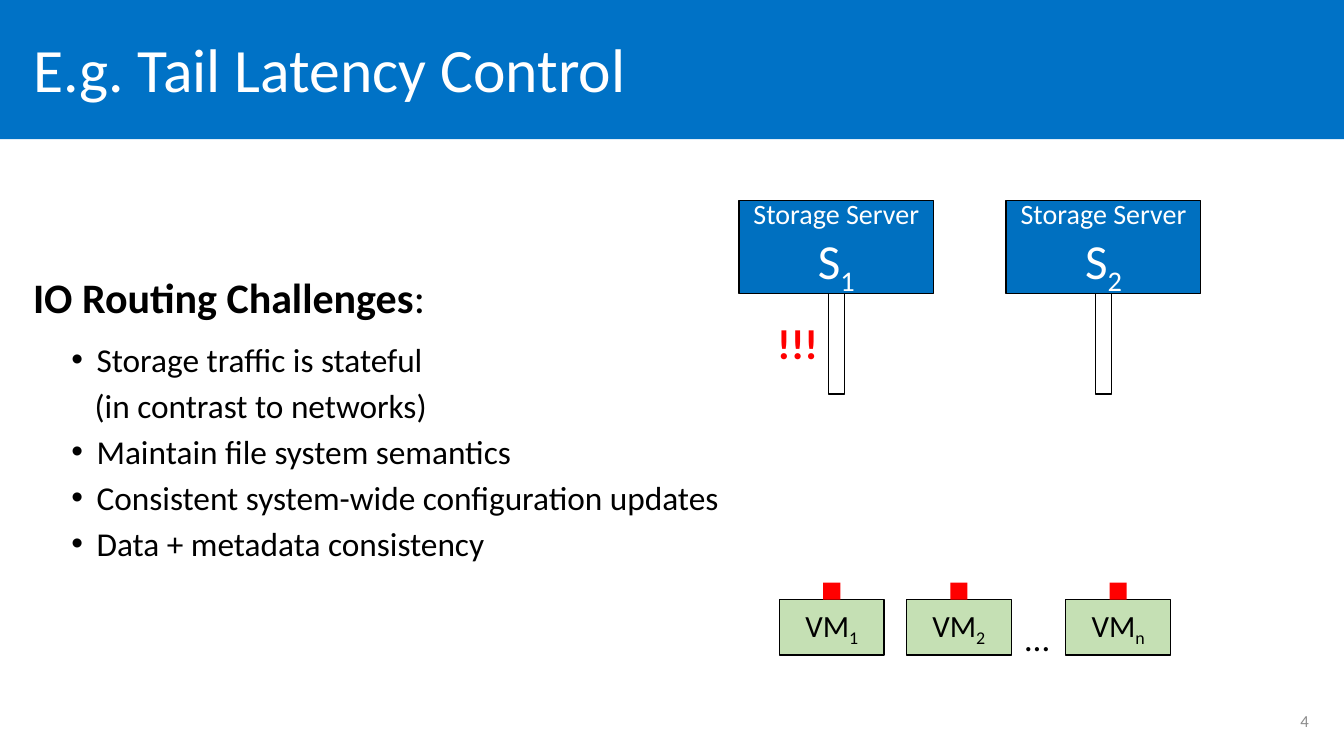
from lxml import etree
from pptx import Presentation
from pptx import util as u
from pptx.dml.color import RGBColor
from pptx.enum import shapes, text
from pptx.oxml.ns import qn

COLORS = {
    "banner": "0072C6", "server": "0070C0", "vm": "C5E0B4", "alert": "FF0000",
    "black": "000000", "white": "FFFFFF", "number": "8C8C8C",
}
TITLE = "E.g. Tail Latency Control"
HEADING = [("IO Routing Challenges", {"bold": True}), (":", {})]
CHALLENGES = [
    ("Storage traffic is stateful", True),
    ("(in contrast to networks)", False),
    ("Maintain file system semantics", True),
    ("Consistent system-wide configuration updates", True),
    ("Data + metadata consistency", True),
]
SERVERS = [("1", 7.33), ("2", 9.98)]
VMS = [("1", 7.73), ("2", 8.99), ("n", 10.57)]

SERVER_TOP, SERVER_W, SERVER_H = 1.99, 1.93, 0.92
VM_TOP, VM_W, VM_H = 5.95, 1.04, 0.55
PIPE_W, PIPE_H = 0.16, 1
REQUEST = 0.17
LEFT, CENTER, RIGHT = text.PP_ALIGN.LEFT, text.PP_ALIGN.CENTER, text.PP_ALIGN.RIGHT
MIDDLE, TOP = text.MSO_ANCHOR.MIDDLE, text.MSO_ANCHOR.TOP


def rgb(name):
    return RGBColor.from_string(COLORS[name])


def write(frame, lines, size=18, color="black", align=LEFT, anchor=TOP, wrap=True,
          spacing=None, before=None):
    frame.word_wrap = wrap
    frame.vertical_anchor = anchor
    for index, line in enumerate(lines):
        paragraph = frame.paragraphs[0] if index == 0 else frame.add_paragraph()
        paragraph.alignment = align
        if spacing:
            paragraph.line_spacing = spacing
        if before is not None:
            paragraph.space_before = u.Pt(before)
        for words, style in line:
            run = paragraph.add_run()
            run.text = words
            run.font.name = "Calibri"
            run.font.size = u.Pt(style.get("size", size))
            run.font.bold = style.get("bold", False)
            run.font.color.rgb = rgb(color)
            if style.get("sub"):
                run.font._element.set("baseline", "-25000")


def box(slide, left, top, width, height, fill=None, line=None):
    rect = slide.shapes.add_shape(shapes.MSO_SHAPE.RECTANGLE,
                                  *map(u.Inches, (left, top, width, height)))
    rect.shadow.inherit = False
    if fill:
        rect.fill.solid()
        rect.fill.fore_color.rgb = rgb(fill)
    else:
        rect.fill.background()
    if line:
        rect.line.color.rgb = rgb(line)
        rect.line.width = u.Pt(1)
    else:
        rect.line.fill.background()
    return rect


def label(slide, left, top, width, height, lines, **style):
    area = slide.shapes.add_textbox(*map(u.Inches, (left, top, width, height)))
    write(area.text_frame, lines, **style)
    return area.text_frame


def indent(paragraph, bulleted):
    props = paragraph._p.get_or_add_pPr()
    props.set("marL", str(u.Inches(0.25 if bulleted else 0.23)))
    props.set("indent", str(u.Inches(-0.25 if bulleted else 0)))
    if bulleted:
        etree.SubElement(props, qn("a:buFont")).set("typeface", "Arial")
        etree.SubElement(props, qn("a:buChar")).set("char", "•")


def main():
    deck = Presentation()
    deck.slide_width, deck.slide_height = u.Inches(13.33), u.Inches(7.5)
    slide = deck.slides.add_slide(deck.slide_layouts[5])

    title = slide.shapes.title
    title.left, title.top, title.width, title.height = map(u.Inches, (0.23, 0.13, 12.85, 1.18))
    write(title.text_frame, [[(TITLE, {})]], size=44, color="white", anchor=MIDDLE, spacing=0.9)
    banner = box(slide, 0, 0, 13.33, 1.38, "banner")
    title._element.addprevious(banner._element)

    label(slide, 0.23, 2.64, 4.13, 0.61, [HEADING], size=30, wrap=False)
    challenges = label(slide, 0.61, 3.39, 7, 2.38, [[(words, {})] for words, _ in CHALLENGES],
                       size=23.8, spacing=0.8, before=10)
    for paragraph, (_, bulleted) in zip(challenges.paragraphs, CHALLENGES):
        indent(paragraph, bulleted)

    for number, left in SERVERS:
        server = box(slide, left, SERVER_TOP, SERVER_W, SERVER_H, "server", "black")
        write(server.text_frame,
              [[("Storage Server", {"size": 20})], [("S", {}), (number, {"sub": True})]],
              size=35, color="white", align=CENTER, anchor=MIDDLE)
        box(slide, left + (SERVER_W - PIPE_W) / 2, SERVER_TOP + SERVER_H,
            PIPE_W, PIPE_H, line="black")

    for number, left in VMS:
        vm = box(slide, left, VM_TOP, VM_W, VM_H, "vm", "black")
        write(vm.text_frame, [[("VM", {}), (number, {"sub": True})]],
              size=22, align=CENTER, anchor=MIDDLE)
        box(slide, left + (VM_W - REQUEST) / 2, VM_TOP - REQUEST, REQUEST, REQUEST, "alert")

    label(slide, 7.61, 3.1, 0.61, 0.61, [[("!!!", {"bold": True})]],
          size=30, color="alert", wrap=False)
    label(slide, 10.07, 6.07, 0.44, 0.52, [[("…", {})]], size=25, wrap=False)
    label(slide, 10.08, 6.95, 3, 0.4, [[("4", {})]],
          size=12, color="number", align=RIGHT, anchor=MIDDLE)
    deck.save("out.pptx")


if __name__ == "__main__":
    main()
